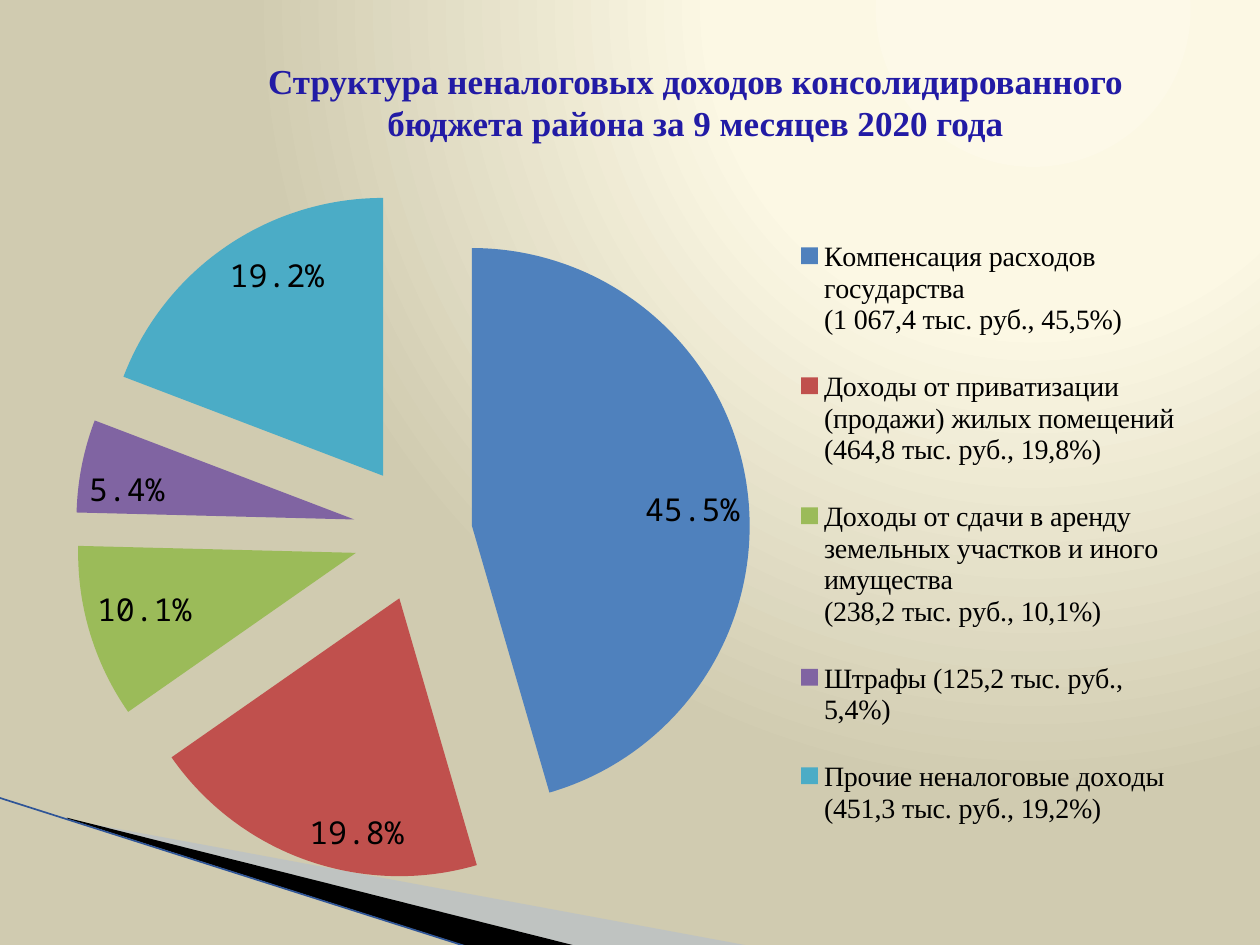
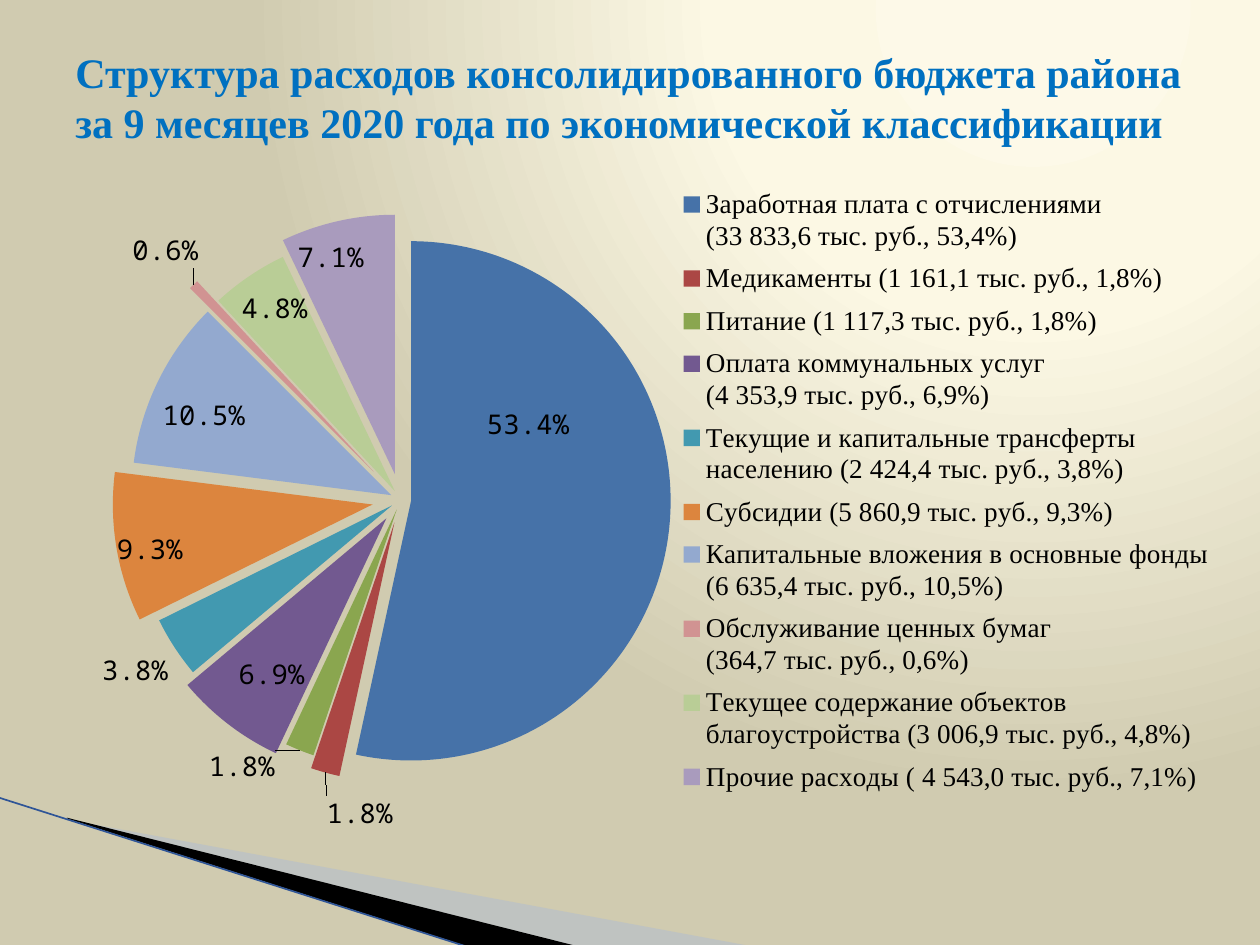
from lxml import etree
from pptx import Presentation
from pptx.chart.data import CategoryChartData
from pptx.dml.color import RGBColor
from pptx.enum.chart import XL_CHART_TYPE, XL_LABEL_POSITION, XL_LEGEND_POSITION
from pptx.enum.shapes import MSO_CONNECTOR
from pptx.enum.text import MSO_ANCHOR, PP_ALIGN
from pptx.oxml import parse_xml
from pptx.oxml.ns import qn
from pptx.util import Pt

PIE = XL_CHART_TYPE.PIE
INSIDE_END = XL_LABEL_POSITION.INSIDE_END
OUTSIDE_END = XL_LABEL_POSITION.OUTSIDE_END
CENTER = XL_LABEL_POSITION.CENTER
LEGEND_RIGHT = XL_LEGEND_POSITION.RIGHT
MIDDLE = MSO_ANCHOR.MIDDLE
STRAIGHT = MSO_CONNECTOR.STRAIGHT

SERIF = "Times New Roman"
MONO = "Noto Sans Mono"
BLACK = "000000"
PERCENT = "0.0%"
BACKDROP = [(0, "FDF9E8"), (40, "FCF8E4"), (100, "D0CBB0")]

# outline, colour, opacity in percent
WEDGES = [
    ([(39.6, 468.5), (428.4, 540.5), (328.3, 540.5)], "A7B9DB", 40),
    ([(38.2, 467.3), (329, 540.5), (267.8, 541), (38.9, 468)], BLACK, 100),
]
EDGE_LINE = (0, 456, 267, 541)
EDGE_COLOR = "2F5597"

# Slices: legend text, share, colour, explosion, label shift (None keeps the default place)
INCOME = {
    "title": "Структура неналоговых доходов консолидированного бюджета района "
             "за 9 месяцев 2020 года",
    "title_box": (111, 21.6, 573, 72.7),
    "title_style": (20, "221BA5", PP_ALIGN.CENTER),
    "chart_box": (36, 88.5, 648, 420),
    "plot_area": (0, 0.042, 0.634, 0.945),
    "legend_area": (0.648, 0.07, 0.335, 0.89),
    "legend_size": 16,
    "explosion": 25,
    "label_size": 18,
    "label_position": INSIDE_END,
    "slices": [
        ("Компенсация расходов государства\n(1 067,4 тыс. руб., 45,5%)",
         0.455, "4F81BD", 18, None),
        ("Доходы от приватизации (продажи) жилых помещений (464,8 тыс. руб., 19,8%)",
         0.198, "C0504D", 25, None),
        ("Доходы от сдачи в аренду земельных участков и иного имущества\n"
         "(238,2 тыс. руб., 10,1%)", 0.101, "9BBB59", 25, None),
        ("Штрафы (125,2 тыс. руб., 5,4%)", 0.054, "8064A2", 25, None),
        ("Прочие неналоговые доходы (451,3 тыс. руб., 19,2%)",
         0.192, "4BACC6", 25, None),
    ],
}
SPENDING = {
    "title": "Структура расходов консолидированного бюджета района "
             "за 9 месяцев 2020 года по экономической классификации",
    "title_box": (36, 21.6, 659, 67),
    "title_style": (24, "0070C0", PP_ALIGN.LEFT),
    "chart_box": (27.4, 86.4, 675.4, 431.3),
    "plot_area": (0.07, 0.104, 0.457, 0.716),
    "legend_area": (0.53, 0.035, 0.46, 0.83),
    "legend_size": 15.5,
    "explosion": 4,
    "label_size": 15.5,
    "label_position": OUTSIDE_END,
    "slices": [
        ("Заработная плата с отчислениями\n(33 833,6 тыс. руб., 53,4%)",
         0.534, "4672A8", 4, (-0.01, -0.12)),
        ("Медикаменты (1 161,1 тыс. руб., 1,8%)", 0.018, "AB4744", 9, (0, 0.22)),
        ("Питание (1 117,3 тыс. руб., 1,8%)", 0.018, "8AA64F", 4, (-0.09, 0.18)),
        ("Оплата коммунальных услуг\n(4 353,9 тыс. руб., 6,9%)",
         0.069, "725990", 9, (-0.03, 0.07)),
        ("Текущие и капитальные трансферты населению (2 424,4 тыс. руб., 3,8%)",
         0.038, "4299B0", 4, None),
        ("Субсидии (5 860,9 тыс. руб., 9,3%)", 0.093, "DC853E", 11, (-0.08, 0.03)),
        ("Капитальные вложения в основные фонды (6 635,4 тыс. руб., 10,5%)",
         0.105, "93A9CF", 4, (-0.06, -0.03)),
        ("Обслуживание ценных бумаг\n(364,7 тыс. руб., 0,6%)",
         0.006, "D19392", 15, (-0.1, -0.17)),
        ("Текущее содержание объектов благоустройства (3 006,9 тыс. руб., 4,8%)",
         0.048, "B9CD96", 4, (-0.04, -0.1)),
        ("Прочие расходы ( 4 543,0 тыс. руб., 7,1%)",
         0.071, "A99BBD", 10, (-0.03, -0.12)),
    ],
}


def color(hex_code):
    return RGBColor.from_string(hex_code)


def points(values):
    return [Pt(value) for value in values]


def style_font(font, name, size, hex_code=BLACK, bold=False):
    font.name, font.size, font.bold = name, Pt(size), bold
    font.color.rgb = color(hex_code)


def value_element(tag, value):
    element = etree.Element(qn(tag))
    element.set("val", str(value))
    return element


def manual_layout(**settings):
    """Chart layout element; settings come in schema order."""
    layout = etree.Element(qn("c:layout"))
    manual = etree.SubElement(layout, qn("c:manualLayout"))
    for name, value in settings.items():
        manual.append(value_element(f"c:{name}", value))
    return layout


def area_layout(x, y, w, h, **target):
    return manual_layout(**target, xMode="edge", yMode="edge", x=x, y=y, w=w, h=h)


def paint_backdrop(master):
    """Round gradient spreading from the upper right."""
    fill = master.background.fill
    fill.gradient()
    gradient = master.element.find(".//" + qn("a:gradFill"))
    stops = "".join(f'<a:gs pos="{at * 1000}"><a:srgbClr val="{tone}"/></a:gs>'
                    for at, tone in BACKDROP)
    gradient.getparent().replace(gradient, parse_xml(
        '<a:gradFill xmlns:a="http://schemas.openxmlformats.org/drawingml/2006/main" '
        f'rotWithShape="1"><a:gsLst>{stops}</a:gsLst><a:path path="circle">'
        '<a:fillToRect l="65000" b="98000"/></a:path></a:gradFill>'))


def add_corner(slide):
    """Wedges and edge line at the lower left."""
    for outline, tone, opacity in WEDGES:
        start, *rest = [points(corner) for corner in outline]
        builder = slide.shapes.build_freeform(*start, scale=1.0)
        builder.add_line_segments(rest, close=True)
        wedge = builder.convert_to_shape()
        wedge.shadow.inherit = False
        wedge.fill.solid()
        wedge.fill.fore_color.rgb = color(tone)
        wedge.line.fill.background()
        if opacity < 100:
            tint = wedge.element.spPr.find(".//" + qn("a:srgbClr"))
            tint.append(value_element("a:alpha", opacity * 1000))
    edge = slide.shapes.add_connector(STRAIGHT, *points(EDGE_LINE))
    edge.line.color.rgb = color(EDGE_COLOR)
    edge.line.width = Pt(0.95)
    etree.SubElement(edge.element.spPr, qn("a:effectLst"))


def add_title(slide, topic):
    size, tone, alignment = topic["title_style"]
    frame = slide.shapes.add_textbox(*points(topic["title_box"])).text_frame
    frame.word_wrap = True
    frame.vertical_anchor = MIDDLE
    frame.text = topic["title"]
    heading = frame.paragraphs[0]
    heading.alignment = alignment
    style_font(heading.runs[0].font, SERIF, size, tone, bold=True)


def format_slices(series, topic):
    for index, (_, _, tone, explosion, shift) in enumerate(topic["slices"]):
        point = series.points[index]
        point.format.fill.solid()
        point.format.fill.fore_color.rgb = color(tone)
        slice_xml = series._element.findall(qn("c:dPt"))[index]
        slice_xml.find(qn("c:spPr")).addprevious(
            value_element("c:explosion", explosion))
        if shift:
            label = point.data_label
            style_font(label.font, MONO, topic["label_size"])
            label.position = CENTER
            label_xml = series._element.findall(".//" + qn("c:dLbl"))[-1]
            label_xml.find(qn("c:idx")).addnext(
                manual_layout(x=shift[0], y=shift[1]))
    series._element.find(qn("c:dPt")).addprevious(
        value_element("c:explosion", topic["explosion"]))


def add_pie(slide, topic):
    data = CategoryChartData(number_format=PERCENT)
    data.categories = [entry[0] for entry in topic["slices"]]
    data.add_series("Series 1", [entry[1] for entry in topic["slices"]])
    chart = slide.shapes.add_chart(PIE, *points(topic["chart_box"]), data).chart
    chart.has_title = False
    style_font(chart.font, MONO, 18)

    chart.has_legend = True
    chart.legend.position = LEGEND_RIGHT
    chart.legend.include_in_layout = False
    style_font(chart.legend.font, SERIF, topic["legend_size"])
    legend_xml = chart.element.find(".//" + qn("c:legend"))
    for old in legend_xml.findall(qn("c:layout")):
        legend_xml.remove(old)
    legend_xml.find(qn("c:legendPos")).addnext(area_layout(*topic["legend_area"]))

    plot_xml = chart.element.find(".//" + qn("c:plotArea"))
    for old in plot_xml.findall(qn("c:layout")):
        plot_xml.remove(old)
    plot_xml.insert(0, area_layout(*topic["plot_area"], layoutTarget="inner"))

    pie = chart.plots[0]
    pie.vary_by_categories = True
    series = pie.series[0]
    labels = series.data_labels
    labels.show_value = True
    labels.number_format = PERCENT
    labels.number_format_is_linked = False
    labels.position = topic["label_position"]
    style_font(labels.font, MONO, topic["label_size"])
    format_slices(series, topic)


def main():
    deck = Presentation()
    deck.slide_width, deck.slide_height = Pt(720), Pt(540)
    paint_backdrop(deck.slide_master)
    for topic in (INCOME, SPENDING):
        slide = deck.slides.add_slide(deck.slide_layouts[6])
        add_corner(slide)
        add_pie(slide, topic)
        add_title(slide, topic)
    deck.save("out.pptx")


if __name__ == "__main__":
    main()
